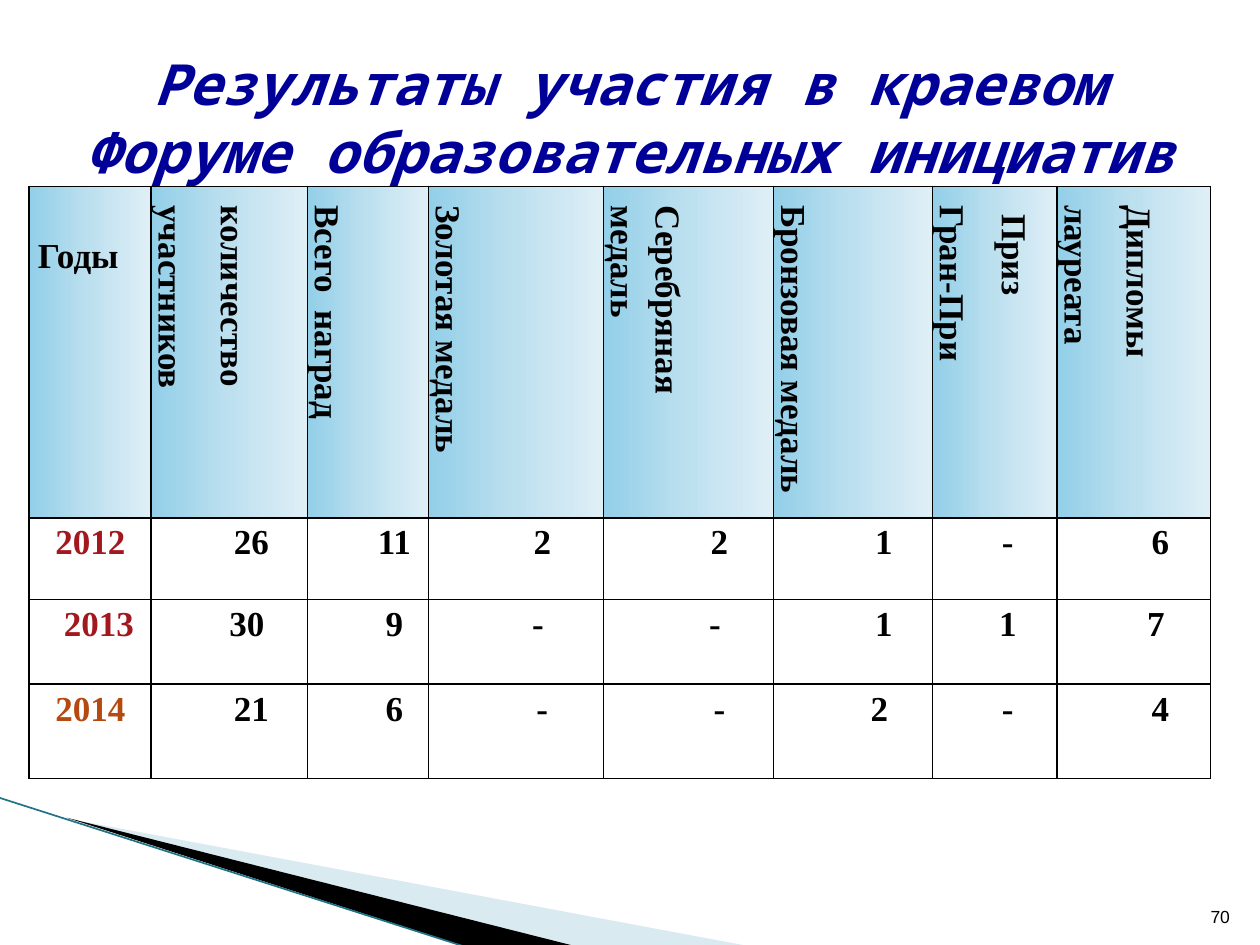
from pptx import Presentation
from pptx.dml.color import RGBColor
from pptx.enum.shapes import MSO_CONNECTOR
from pptx.enum.text import MSO_ANCHOR, PP_ALIGN
from pptx.oxml import parse_xml
from pptx.oxml.ns import qn
from pptx.util import Inches, Pt
from lxml import etree

LEFT, CENTER, RIGHT = PP_ALIGN.LEFT, PP_ALIGN.CENTER, PP_ALIGN.RIGHT
MIDDLE, BOTTOM = MSO_ANCHOR.MIDDLE, MSO_ANCHOR.BOTTOM
STRAIGHT = MSO_CONNECTOR.STRAIGHT
NS = 'xmlns:a="http://schemas.openxmlformats.org/drawingml/2006/main"'

COLS = [0.97, 1.24, 0.96, 1.39, 1.35, 1.26, 0.99, 1.22]
ROWS = [2.63, 0.65, 0.67, 0.75]
SPACE = 0.07  # width of one space in the table's font, inches
HEADERS = [["Годы"], ["количество", "участников"], ["Всего  наград"],
           ["Золотая медаль"], ["Серебряная медаль"], ["Бронзовая медаль"],
           ["Приз", "Гран-При"], ["Дипломы", "лауреата"]]
# Year, its colour and alignment, then values with their indents in spaces
RESULTS = [
    ("2012", "A3171E", LEFT, ["26", "11", "2", "2", "1", "-", "6"],
     [5, 6, 6, 7, 7, 3, 6]),
    ("2013", "A3171E", CENTER, ["30", "9", "-", "-", "1", "1", "7"],
     [4, 6, 5, 6, 7, 3, 5]),
    ("2014", "B54A10", LEFT, ["21", "6", "-", "-", "2", "-", "4"],
     [5, 6, 6, 7, 6, 3, 6]),
]
GRADIENT = [(0, "92CFE8"), (50, "BDE0EF"), (100, "DFEFF6")]


def rgb(value):
    return RGBColor.from_string(value)


def set_font(font, color, **values):
    for name, value in values.items():
        setattr(font, name, value)
    font.color.rgb = rgb(color)


def add_wedge(s, frame, points, color, alpha=100):
    """Draw an outline whose points may reach beyond the shape's frame."""
    start, *rest = [(Inches(x), Inches(y)) for x, y in points]
    builder = s.shapes.build_freeform(*start)
    builder.add_line_segments(rest, close=True)
    sp = builder.convert_to_shape()
    left, top, width, height = map(Inches, frame)
    dx, dy = sp.left - left, sp.top - top
    sp.left, sp.top, sp.width, sp.height = left, top, width, height
    for outline in sp._element.iter(qn("a:path")):
        outline.set("w", str(width))
        outline.set("h", str(height))
        for pt in outline.iter(qn("a:pt")):
            pt.set("x", str(int(pt.get("x")) + dx))
            pt.set("y", str(int(pt.get("y")) + dy))
    sp.shadow.inherit = False
    sp.fill.solid()
    sp.fill.fore_color.rgb = rgb(color)
    sp.line.fill.background()
    if alpha < 100:
        clr = sp.fill._xPr.find(qn("a:solidFill"))[0]
        etree.SubElement(clr, qn("a:alpha"), val=str(alpha * 1000))


def add_line(s, start, end, color, width):
    line = s.shapes.add_connector(STRAIGHT, *map(Inches, start + end))
    line.line.color.rgb = rgb(color)
    line.line.width = Pt(width)
    etree.SubElement(line._element.spPr, qn("a:effectLst"))


def add_title(s, text):
    title = s.shapes.title
    title.left, title.top, title.width, title.height = map(
        Inches, (0.5, 0.3, 9, 1.25))
    tf = title.text_frame
    tf.word_wrap, tf.vertical_anchor = True, MIDDLE
    p = tf.paragraphs[0]
    p.alignment = CENTER
    r = p.add_run()
    r.text = text
    set_font(r.font, "000099", name="Noto Sans Mono", size=Pt(32.4),
             bold=True, italic=True)


def add_page_number(s, text):
    tf = s.shapes.add_textbox(*map(Inches, (9.46, 7.01, 0.4, 0.4))).text_frame
    tf.word_wrap, tf.vertical_anchor = True, BOTTOM
    p = tf.paragraphs[0]
    p.alignment = RIGHT
    r = p.add_run()
    r.text = text
    set_font(r.font, "000000", name="Arial", size=Pt(10))


def style_cell(cell, header):
    """Set insets, black borders and the fill of a cell."""
    cell.margin_left = cell.margin_right = Inches(0.07)
    cell.margin_top = cell.margin_bottom = 0
    tc_pr = cell._tc.get_or_add_tcPr()
    for side in "LRTB":
        tc_pr.append(parse_xml(
            f'<a:ln{side} {NS} w="12700"><a:solidFill><a:srgbClr val="000000"/>'
            f'</a:solidFill></a:ln{side}>'))
    if header:
        stops = "".join(f'<a:gs pos="{pos * 1000}"><a:srgbClr val="{color}"/></a:gs>'
                        for pos, color in GRADIENT)
        tc_pr.append(parse_xml(f'<a:gradFill {NS}><a:gsLst>{stops}</a:gsLst>'
                               '<a:lin ang="0" scaled="0"/></a:gradFill>'))
    else:
        cell.fill.background()


def write_cell(cell, lines, color="000000", align=LEFT, indents=(0,)):
    tf = cell.text_frame
    for i, text in enumerate(lines):
        p = tf.paragraphs[0] if i == 0 else tf.add_paragraph()
        p.alignment, p.line_spacing, p.space_after = align, 1.15, Pt(10)
        p._p.get_or_add_pPr().set("marL", str(Inches(indents[i])))
        r = p.add_run()
        r.text = text
        set_font(r.font, color, name="Times New Roman", size=Pt(20), bold=True)


def add_results(s):
    frame = s.shapes.add_table(len(ROWS), len(COLS), Inches(0.23), Inches(1.48),
                               Inches(sum(COLS)), Inches(sum(ROWS)))
    table = frame.table
    table.first_row = table.horz_banding = False
    for col, width in zip(table.columns, COLS):
        col.width = Inches(width)
    for i, (row, height) in enumerate(zip(table.rows, ROWS)):
        row.height = Inches(height)
        for cell in row.cells:
            style_cell(cell, header=i == 0)

    for j, lines in enumerate(HEADERS):
        cell = table.cell(0, j)
        if j == 0:
            cell.margin_top = Inches(0.36)
            write_cell(cell, lines)
        else:
            cell._tc.tcPr.set("vert", "vert")
            first = 0.08 + SPACE * (lines[0] == "Приз")
            write_cell(cell, lines, indents=(first, 0.08))

    for i, (year, color, align, values, spaces) in enumerate(RESULTS, 1):
        write_cell(table.cell(i, 0), [year], color, align, [2 * SPACE])
        for j, (value, count) in enumerate(zip(values, spaces), 1):
            write_cell(table.cell(i, j), [value], align=CENTER,
                       indents=[count * SPACE])


def main():
    prs = Presentation()
    prs.slide_width, prs.slide_height = Inches(10), Inches(7.5)
    s = prs.slides.add_slide(prs.slide_layouts[5])
    add_wedge(s, (0.78, 5.47, 4.16, 1.58),
              [(0.55, 6.5), (5.95, 7.51), (4.56, 7.51)], "A0CBDC", 40)
    add_wedge(s, (-0.06, 6.33, 4.16, 0.92),
              [(0.53, 6.49), (4.57, 7.51), (3.72, 7.52)], "000000")
    add_line(s, (-0.01, 6.33), (3.71, 7.52), "1F7385", 0.95)
    add_title(s, "Результаты участия в краевом Форуме образовательных инициатив")
    add_page_number(s, "70")
    add_results(s)
    prs.save("out.pptx")


if __name__ == "__main__":
    main()
